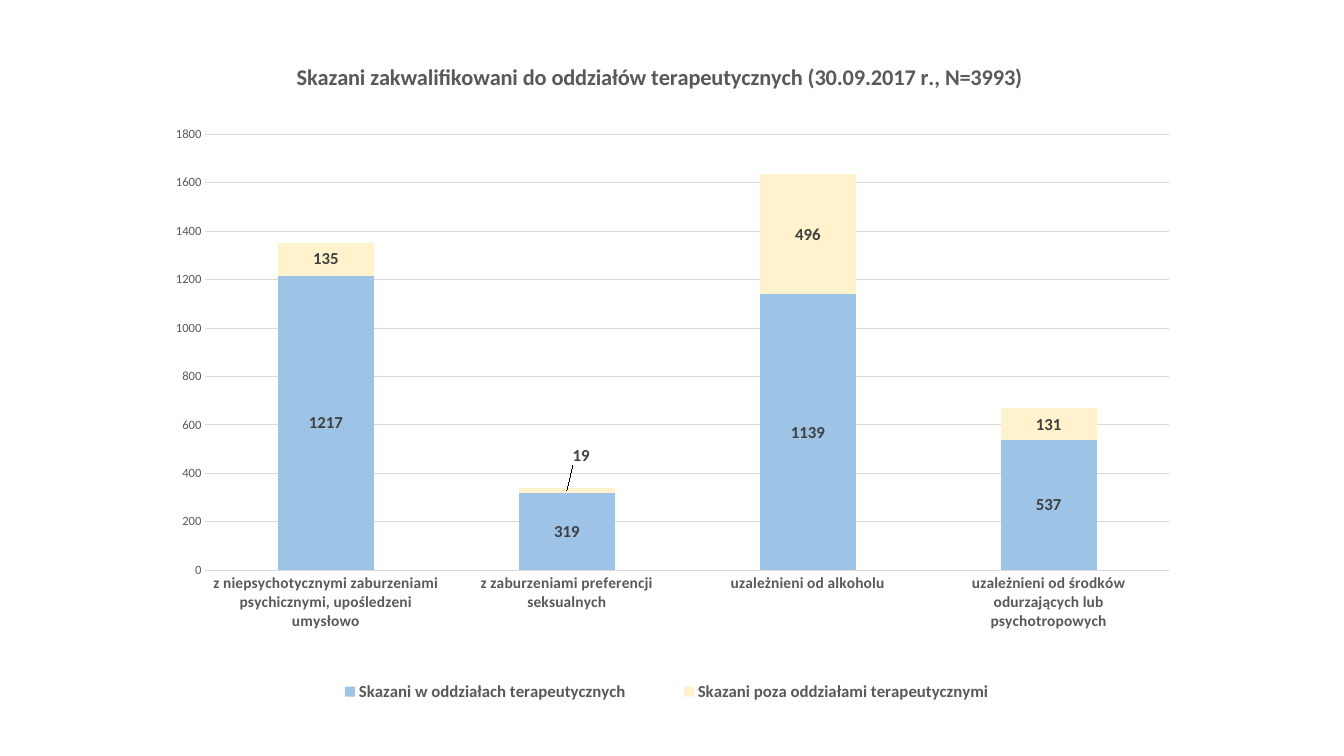
"""Build a slide with a stacked column chart of convicts qualified for therapeutic wards."""
from dataclasses import dataclass

from lxml import etree
from pptx import Presentation
from pptx.chart.data import CategoryChartData
from pptx.dml.color import RGBColor
from pptx.enum.chart import XL_CHART_TYPE, XL_LABEL_POSITION, XL_LEGEND_POSITION, XL_TICK_MARK
from pptx.oxml.ns import qn
from pptx.util import Inches, Pt

STACKED = XL_CHART_TYPE.COLUMN_STACKED
CENTER = XL_LABEL_POSITION.CENTER
BOTTOM = XL_LEGEND_POSITION.BOTTOM
NO_TICK = XL_TICK_MARK.NONE

FONT = "Calibri"
GREY, DARK, GRID = "595959", "404040", "D9D9D9"
TITLE = "Skazani zakwalifikowani do oddziałów terapeutycznych (30.09.2017 r., N=3993)"
CATEGORIES = [
    "z niepsychotycznymi zaburzeniami psychicznymi, upośledzeni umysłowo",
    "z zaburzeniami preferencji seksualnych",
    "uzależnieni od alkoholu",
    "uzależnieni od środków odurzających lub psychotropowych",
]


@dataclass(frozen=True)
class Group:
    name: str
    values: tuple[int, ...]
    fill: str


GROUPS = [
    Group("Skazani w oddziałach terapeutycznych", (1217, 319, 1139, 537), "9DC3E6"),
    Group("Skazani poza oddziałami terapeutycznymi", (135, 19, 496, 131), "FFF2CC"),
]


def color(value: str) -> RGBColor:
    return RGBColor.from_string(value)


def style_font(font, size: float, fill: str = GREY, bold: bool = False) -> None:
    font.name = FONT
    font.size = Pt(size)
    font.bold = bold
    font.color.rgb = color(fill)


def place(parent, index: int, **settings) -> None:
    for old in parent.findall(qn("c:layout")):
        parent.remove(old)
    layout = etree.Element(qn("c:layout"))
    manual = etree.SubElement(layout, qn("c:manualLayout"))
    for name, value in settings.items():
        etree.SubElement(manual, qn(f"c:{name}")).set("val", str(value))
    parent.insert(index, layout)


def style_axes(chart) -> None:
    for axis, size, bold in ((chart.category_axis, 11, True), (chart.value_axis, 9, False)):
        axis.major_tick_mark = axis.minor_tick_mark = NO_TICK
        axis.format.line.fill.background()
        style_font(axis.tick_labels.font, size, bold=bold)
    values = chart.value_axis
    values.minimum_scale, values.maximum_scale, values.major_unit = 0, 1800, 200
    values.major_gridlines.format.line.color.rgb = color(GRID)
    values.major_gridlines.format.line.width = Pt(0.75)


def style_series(series, group: Group) -> None:
    series.format.fill.solid()
    series.format.fill.fore_color.rgb = color(group.fill)
    labels = series.data_labels
    labels.show_value = True
    labels.position = CENTER
    style_font(labels.font, 12, DARK, bold=True)


def raise_label(series, point: int) -> None:
    label = series.points[point].data_label
    label.position = CENTER
    style_font(label.font, 12, DARK, bold=True)
    element = series.data_labels._element.find(qn("c:dLbl"))
    place(element, 1, x=0.014, y=-0.052)


def add_title(chart) -> None:
    chart.has_title = True
    title = chart.chart_title
    span = title.text_frame.paragraphs[0].add_run()
    span.text = TITLE
    style_font(span.font, 16, bold=True)
    title.include_in_layout = False
    place(title._element, 1, xMode="edge", yMode="edge", x=0.13, y=0.02)


def add_legend(chart) -> None:
    chart.has_legend = True
    legend = chart.legend
    legend.position = BOTTOM
    legend.include_in_layout = False
    style_font(legend.font, 12, bold=True)
    place(legend._element, 1, xMode="edge", yMode="edge", x=0.13, y=0.94, w=0.73, h=0.06)


def add_convict_chart(page) -> None:
    data = CategoryChartData()
    data.categories = CATEGORIES
    for group in GROUPS:
        data.add_series(group.name, group.values)
    frame = page.shapes.add_chart(
        STACKED, Inches(1.58), Inches(0.44), Inches(10.17), Inches(6.62), data
    )
    chart = frame.chart
    chart.font.name = FONT
    chart.font.size = Pt(10)
    plot = chart.plots[0]
    plot.gap_width, plot.overlap, plot.vary_by_categories = 150, 100, False
    for series, group in zip(plot.series, GROUPS):
        style_series(series, group)
    raise_label(plot.series[1], 1)
    style_axes(chart)
    add_title(chart)
    add_legend(chart)
    area = chart._chartSpace.find(f".//{qn('c:plotArea')}")
    place(area, 0, layoutTarget="inner", xMode="edge", yMode="edge",
          x=0.045, y=0.135, w=0.94, h=0.653)


def main() -> None:
    deck = Presentation()
    deck.slide_width, deck.slide_height = Inches(13.33), Inches(7.5)
    page = deck.slides.add_slide(deck.slide_layouts[6])
    add_convict_chart(page)
    deck.save("out.pptx")


if __name__ == "__main__":
    main()
